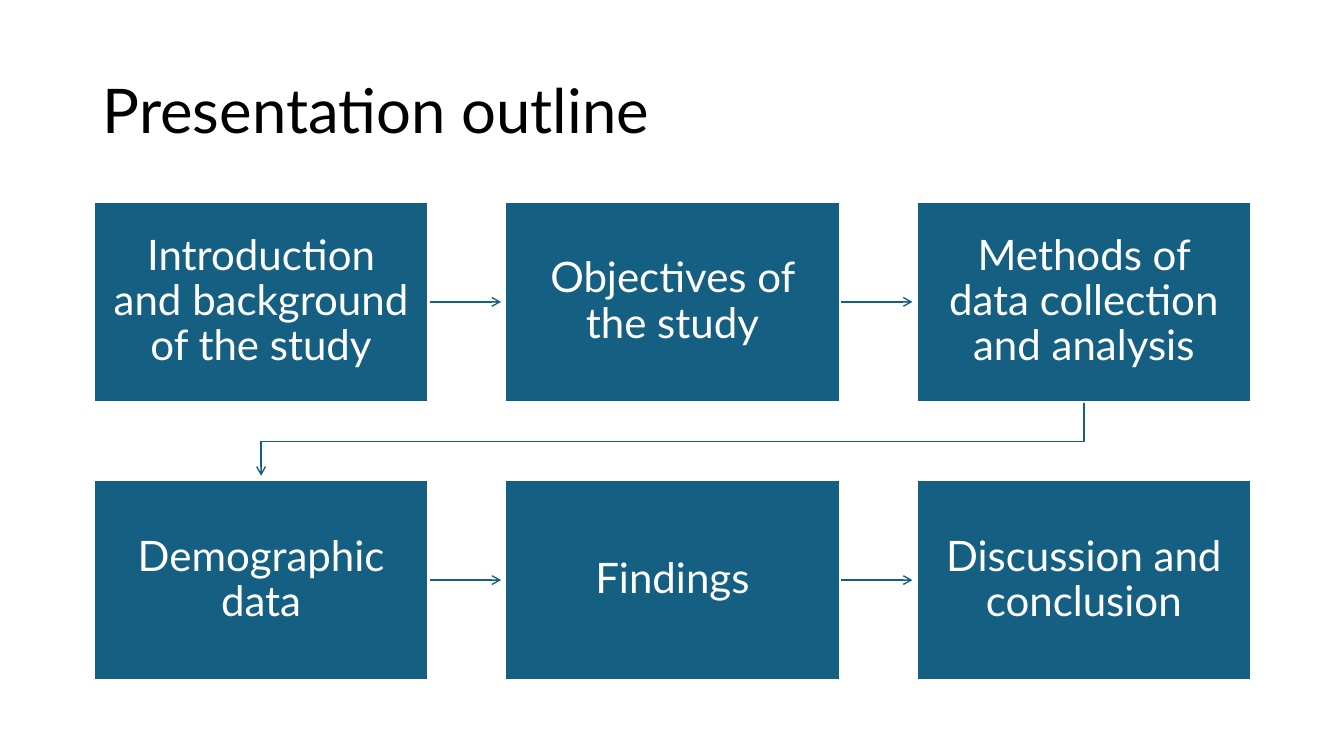
"""Build the presentation outline slide: six steps in two rows, joined by arrows."""
from dataclasses import dataclass

from lxml import etree
from pptx import Presentation
from pptx import util as u
from pptx.dml.color import RGBColor
from pptx.enum import shapes, text
from pptx.oxml.ns import qn

TITLE = "Presentation outline"
STEPS = [
    ["Introduction and background of the study",
     "Objectives of the study",
     "Methods of data collection and analysis"],
    ["Demographic data", "Findings", "Discussion and conclusion"],
]


@dataclass(frozen=True)
class Theme:
    font: str = "Lato"
    accent: RGBColor = RGBColor(0x15, 0x60, 0x82)
    light: RGBColor = RGBColor(0xFF, 0xFF, 0xFF)
    dark: RGBColor = RGBColor(0, 0, 0)
    title_size: int = 44
    step_size: int = 30


THEME = Theme()
EMU_PER_PX = 9144
SLIDE_W, SLIDE_H = 1333, 750
TITLE_BOX = (92, 40, 1150, 145)
LEFT, TOP = 93, 200
STEP_W, STEP_H = 332, 199
PITCH_X, PITCH_Y = 408, 276
ARROW_GAP = 4
TURN_DROP = 39
PAD_X, PAD_Y = 16, 17


def px(n):
    return u.Emu(round(n * EMU_PER_PX))


def step_origin(row, col):
    return LEFT + col * PITCH_X, TOP + row * PITCH_Y


def style_text(p, size, color, align):
    p.alignment = align
    p.line_spacing = 0.9
    p.font.name = THEME.font
    p.font.size = u.Pt(size)
    p.font.color.rgb = color


def style_arrow(s):
    s.line.color.rgb = THEME.accent
    s.line.width = u.Pt(1)
    etree.SubElement(s.line._ln, qn("a:tailEnd"), type="arrow")


def add_arrow(slide, row, col):
    x, y = step_origin(row, col)
    mid = px(y + STEP_H / 2)
    s = slide.shapes.add_connector(
        shapes.MSO_CONNECTOR.STRAIGHT,
        px(x + STEP_W), mid, px(x + PITCH_X - ARROW_GAP), mid)
    style_arrow(s)
    etree.SubElement(s._element.spPr, qn("a:effectLst"))


def add_turn(slide, row):
    x, y = step_origin(row, len(STEPS[row]) - 1)
    start_x, end_x = px(x + STEP_W / 2), px(LEFT + STEP_W / 2)
    bottom = y + STEP_H
    bend_y, end_y = px(bottom + TURN_DROP), px(y + PITCH_Y - ARROW_GAP)
    path = slide.shapes.build_freeform(start_x, px(bottom))
    path.add_line_segments(
        [(start_x, bend_y), (end_x, bend_y), (end_x, end_y)], close=False)
    s = path.convert_to_shape()
    s.fill.background()
    style_arrow(s)
    s.shadow.inherit = False


def add_step(slide, row, col, label):
    x, y = step_origin(row, col)
    s = slide.shapes.add_shape(
        shapes.MSO_SHAPE.RECTANGLE, px(x), px(y), px(STEP_W), px(STEP_H))
    s.shadow.inherit = False
    s.fill.solid()
    s.fill.fore_color.rgb = THEME.accent
    s.line.color.rgb = THEME.light
    s.line.width = u.Pt(1.5)
    tf = s.text_frame
    tf.word_wrap = True
    tf.vertical_anchor = text.MSO_ANCHOR.MIDDLE
    tf.margin_left = tf.margin_right = px(PAD_X)
    tf.margin_top = tf.margin_bottom = px(PAD_Y)
    tf.text = label
    style_text(tf.paragraphs[0], THEME.step_size, THEME.light, text.PP_ALIGN.CENTER)


def main():
    prs = Presentation()
    prs.slide_width, prs.slide_height = px(SLIDE_W), px(SLIDE_H)
    slide = prs.slides.add_slide(prs.slide_layouts[5])

    title = slide.shapes.title
    title.left, title.top, title.width, title.height = map(px, TITLE_BOX)
    tf = title.text_frame
    tf.text = TITLE
    tf.vertical_anchor = text.MSO_ANCHOR.MIDDLE
    style_text(tf.paragraphs[0], THEME.title_size, THEME.dark, text.PP_ALIGN.LEFT)

    for row, labels in enumerate(STEPS):
        for col in range(len(labels) - 1):
            add_arrow(slide, row, col)
        if row < len(STEPS) - 1:
            add_turn(slide, row)
    for row, labels in enumerate(STEPS):
        for col, label in enumerate(labels):
            add_step(slide, row, col, label)

    prs.save("out.pptx")


if __name__ == "__main__":
    main()
